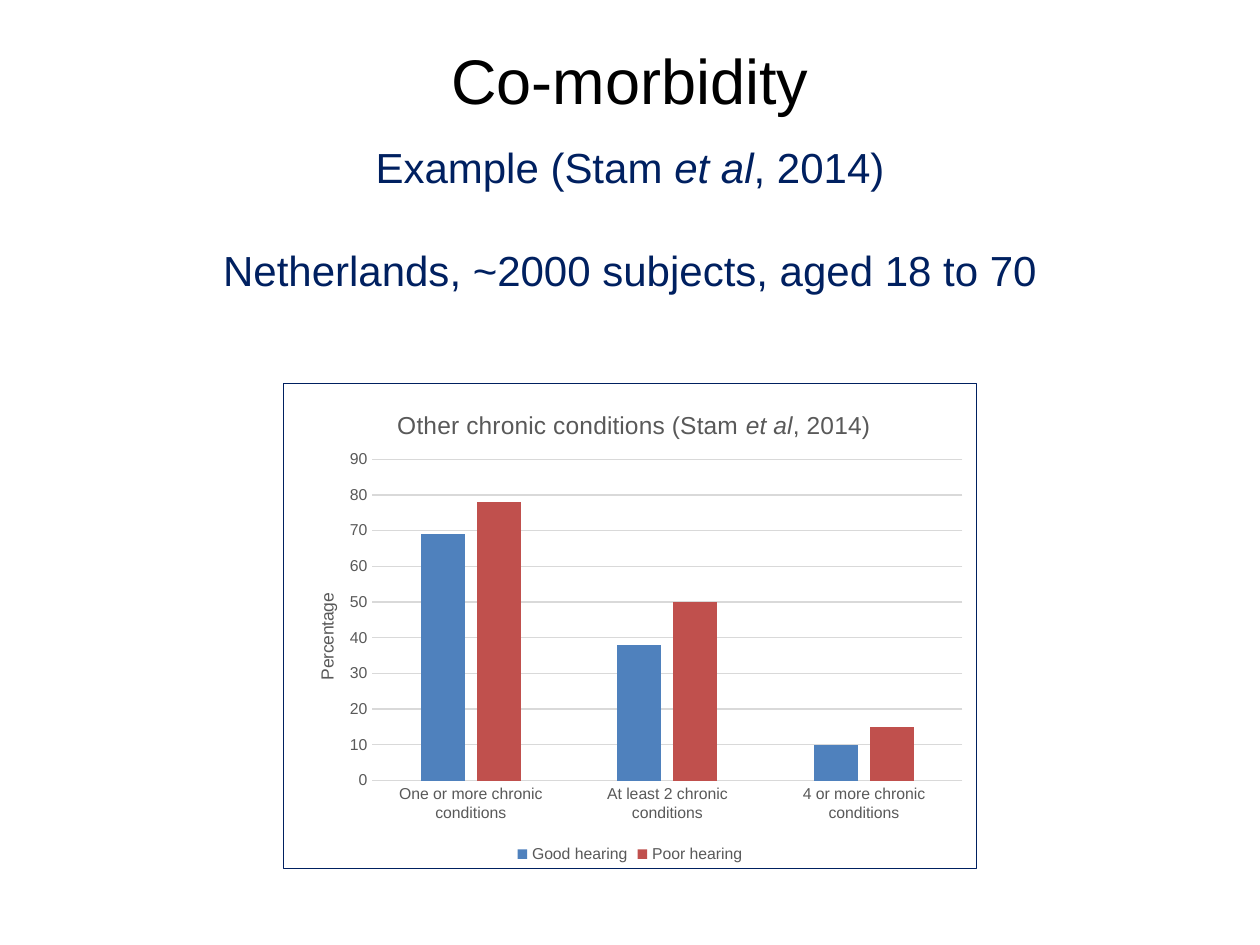
from dataclasses import dataclass

from lxml.etree import SubElement
from pptx import Presentation
from pptx.chart.data import CategoryChartData
from pptx.dml.color import RGBColor
from pptx.enum.chart import XL_CHART_TYPE, XL_LEGEND_POSITION, XL_TICK_MARK
from pptx.enum.text import MSO_ANCHOR, PP_ALIGN
from pptx.oxml import parse_xml
from pptx.oxml.ns import nsdecls, qn
from pptx.util import Emu, Pt

PX = 914400 // 126
FONT = "Arial"
BLACK = RGBColor(0x00, 0x00, 0x00)
NAVY = RGBColor(0x00, 0x20, 0x60)
GRAY = RGBColor(0x59, 0x59, 0x59)
LIGHT = RGBColor(0xD9, 0xD9, 0xD9)
BLUE = RGBColor(0x4F, 0x81, 0xBD)
RED = RGBColor(0xC0, 0x50, 0x4D)


@dataclass(frozen=True)
class Box:
    x: int
    y: int
    w: int = 0
    h: int = 0

    def emu(self) -> tuple[Emu, ...]:
        return tuple(Emu(v * PX) for v in (self.x, self.y, self.w, self.h))


@dataclass(frozen=True)
class Run:
    text: str
    italic: bool = False


@dataclass(frozen=True)
class Series:
    name: str
    values: tuple[int, ...]
    color: RGBColor


CHART = Box(283, 383, 694, 486)
PLOT = Box(372, 459, 591, 322)
CATEGORIES = (
    "One or more chronic conditions",
    "At least 2 chronic conditions",
    "4 or more chronic conditions",
)
SERIES = (
    Series("Good hearing", (69, 38, 10), BLUE),
    Series("Poor hearing", (78, 50, 15), RED),
)
CITATION = (Run("et al", True), Run(", 2014)"))


def style_font(font, size: float, color: RGBColor) -> None:
    font.name, font.size, font.bold = FONT, Pt(size), False
    font.color.rgb = color


def add_runs(p, runs, size: float, color: RGBColor) -> None:
    p.alignment = PP_ALIGN.CENTER
    for run in runs:
        r = p.add_run()
        r.text = run.text
        style_font(r.font, size, color)
        r.font.italic = run.italic


def set_layout(element, box: Box) -> None:
    """Pin a chart part to a slide box; a box without size sets position only."""
    for old in element.findall(qn("c:layout")):
        element.remove(old)
    layout = parse_xml(f"<c:layout {nsdecls('c')}/>")
    tx = element.find(qn("c:tx"))
    element.insert(0 if tx is None else element.index(tx) + 1, layout)
    manual = SubElement(layout, qn("c:manualLayout"))
    settings = {"xMode": "edge", "yMode": "edge"}
    if box.w:
        settings = {"layoutTarget": "inner"} | settings
    settings |= {"x": (box.x - CHART.x) / CHART.w, "y": (box.y - CHART.y) / CHART.h}
    if box.w:
        settings |= {"w": box.w / CHART.w, "h": box.h / CHART.h}
    for tag, value in settings.items():
        text = value if isinstance(value, str) else f"{value:.4f}"
        SubElement(manual, qn(f"c:{tag}")).set("val", text)


def set_border(chart, color: RGBColor) -> None:
    border = parse_xml(
        f"<c:spPr {nsdecls('c', 'a')}><a:noFill/><a:ln w='9525'><a:solidFill>"
        f"<a:srgbClr val='{color}'/></a:solidFill></a:ln></c:spPr>"
    )
    chart.element.find(qn("c:chart")).addnext(border)


def style_axis(axis) -> None:
    axis.major_tick_mark = axis.minor_tick_mark = XL_TICK_MARK.NONE
    style_font(axis.tick_labels.font, 9, GRAY)


def add_hearing_chart(slide) -> None:
    data = CategoryChartData()
    data.categories = CATEGORIES
    for s in SERIES:
        data.add_series(s.name, s.values)
    chart = slide.shapes.add_chart(
        XL_CHART_TYPE.COLUMN_CLUSTERED, *CHART.emu(), data
    ).chart
    style_font(chart.font, 10, BLACK)
    set_border(chart, NAVY)

    title = chart.chart_title
    runs = (Run("Other chronic conditions (Stam "), *CITATION)
    add_runs(title.text_frame.paragraphs[0], runs, 14, GRAY)
    title.include_in_layout = False
    set_layout(title._element, Box(393, 405))

    plot = chart.plots[0]
    plot.gap_width, plot.overlap, plot.vary_by_categories = 219, -27, False
    for series, s in zip(plot.series, SERIES):
        series.format.fill.solid()
        series.format.fill.fore_color.rgb = s.color
    set_layout(chart.element.find(".//" + qn("c:plotArea")), PLOT)

    cat, val = chart.category_axis, chart.value_axis
    style_axis(cat)
    style_axis(val)
    val.minimum_scale, val.maximum_scale, val.major_unit = 0, 90, 10
    val.format.line.fill.background()
    for line in (cat.format.line, val.major_gridlines.format.line):
        line.color.rgb = LIGHT
        line.width = Pt(0.75)
    axis_title = val.axis_title
    add_runs(axis_title.text_frame.paragraphs[0], [Run("Percentage")], 10, GRAY)
    set_layout(axis_title._element, Box(312, 590))

    chart.has_legend = True
    chart.legend.position = XL_LEGEND_POSITION.BOTTOM
    chart.legend.include_in_layout = False
    style_font(chart.legend.font, 9, GRAY)


def add_title(slide) -> None:
    sp = slide.shapes.title
    sp.left, sp.top, sp.width, sp.height = Box(0, 0, 1260, 158).emu()
    tf = sp.text_frame
    tf.vertical_anchor = MSO_ANCHOR.MIDDLE
    add_runs(tf.paragraphs[0], [Run("Co-morbidity")], 36, BLACK)


def add_study_text(slide) -> None:
    tf = slide.shapes.add_textbox(*Box(206, 135, 848, 165).emu()).text_frame
    tf.word_wrap = False
    add_runs(tf.paragraphs[0], (Run("Example (Stam "), *CITATION), 24, NAVY)
    p = tf.add_paragraph()
    p.space_before = Pt(30)
    add_runs(p, [Run("Netherlands, ~2000 subjects, aged 18 to 70")], 24, NAVY)


def main() -> None:
    prs = Presentation()
    prs.slide_width, prs.slide_height = Emu(1260 * PX), Emu(945 * PX)
    slide = prs.slides.add_slide(prs.slide_layouts[5])
    add_title(slide)
    add_study_text(slide)
    add_hearing_chart(slide)
    prs.save("out.pptx")


if __name__ == "__main__":
    main()
